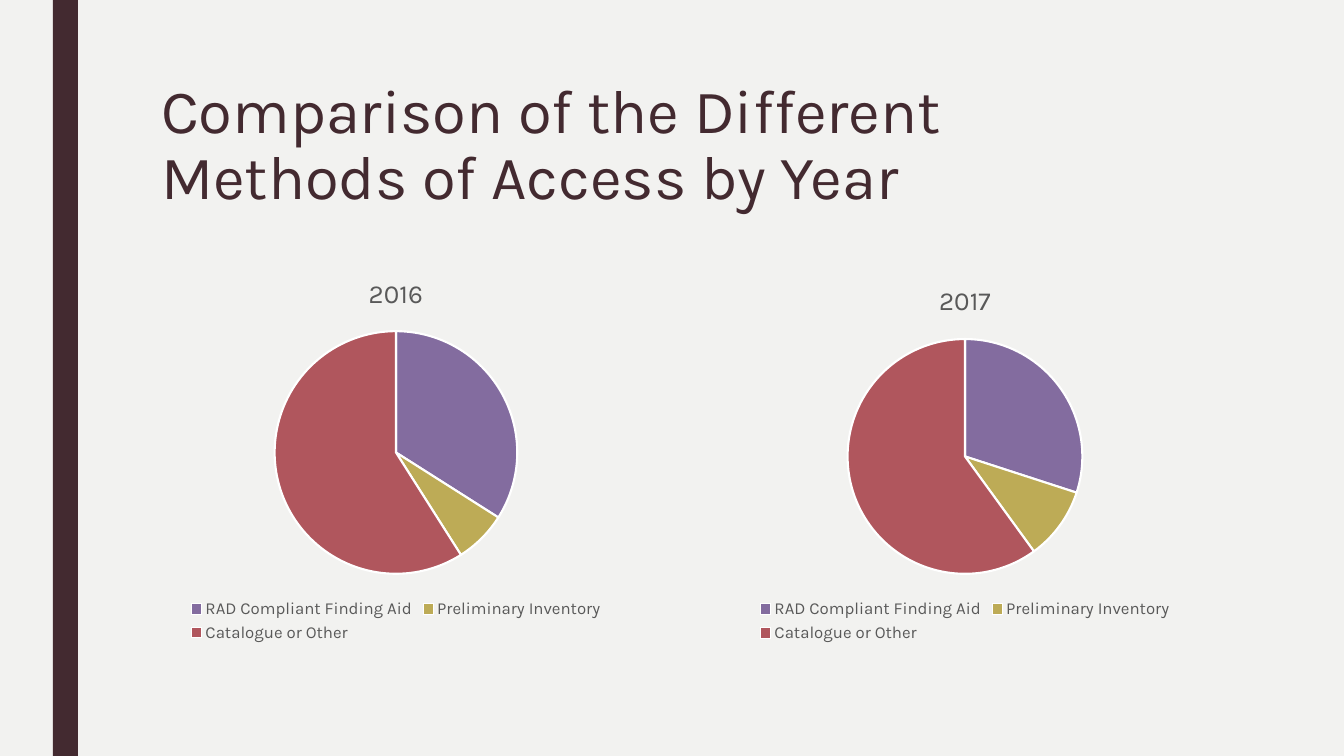
from pptx import Presentation
from pptx.chart.data import CategoryChartData
from pptx.dml.color import RGBColor
from pptx.enum.chart import XL_CHART_TYPE, XL_LEGEND_POSITION
from pptx.enum.shapes import MSO_SHAPE
from pptx.enum.text import MSO_ANCHOR, MSO_AUTO_SIZE, PP_ALIGN
from pptx.util import Emu, Pt

COLOURS = {
    "background": "F2F2F0",
    "plum": "432A30",
    "grey": "595959",
    "black": "000000",
    "white": "FFFFFF",
    "purple": "836C9F",
    "gold": "BDAB56",
    "red": "B0565D",
}
FONT = "Karla"
EMU_PER_PX = 914400 / 100.8
ACCESS_METHODS = {
    "RAD Compliant Finding Aid": "purple",
    "Preliminary Inventory": "gold",
    "Catalogue or Other": "red",
}


class SlideBuilder:
    def __init__(self, presentation):
        self.slide = presentation.slides.add_slide(presentation.slide_layouts[5])
        self.paint(self.slide.background.fill, "background")

    def box(self, *lengths):
        return [Emu(round(length * EMU_PER_PX)) for length in lengths]

    def paint(self, fill, colour):
        fill.solid()
        fill.fore_color.rgb = RGBColor.from_string(COLOURS[colour])

    def style_font(self, font, size, colour):
        font.name = FONT
        font.size = Pt(size)
        font.bold = False
        font.color.rgb = RGBColor.from_string(COLOURS[colour])

    def add_bar(self, left, top, width, height, colour):
        bar = self.slide.shapes.add_shape(
            MSO_SHAPE.RECTANGLE, *self.box(left, top, width, height)
        )
        bar.shadow.inherit = False
        self.paint(bar.fill, colour)
        bar.line.fill.background()

    def set_title(self, text, left, top, width, height):
        title = self.slide.shapes.title
        title.left, title.top, title.width, title.height = self.box(
            left, top, width, height
        )
        text_frame = title.text_frame
        text_frame.text = text
        text_frame.word_wrap = True
        text_frame.auto_size = MSO_AUTO_SIZE.NONE
        text_frame.vertical_anchor = MSO_ANCHOR.TOP
        paragraph = text_frame.paragraphs[0]
        paragraph.alignment = PP_ALIGN.LEFT
        paragraph.line_spacing = 0.89
        self.style_font(paragraph.runs[0].font, 44, "plum")

    def add_pie(self, year, values, left, top, width, height):
        chart_data = CategoryChartData()
        chart_data.categories = list(ACCESS_METHODS)
        chart_data.add_series(year, values)
        chart = self.slide.shapes.add_chart(
            XL_CHART_TYPE.PIE, *self.box(left, top, width, height), chart_data
        ).chart
        self.style_font(chart.font, 10, "black")

        chart.has_title = True
        title_frame = chart.chart_title.text_frame
        title_frame.text = year
        self.style_font(title_frame.paragraphs[0].runs[0].font, 18.6, "grey")
        chart.chart_title.include_in_layout = False

        chart.has_legend = True
        chart.legend.position = XL_LEGEND_POSITION.BOTTOM
        chart.legend.include_in_layout = False
        self.style_font(chart.legend.font, 12, "grey")

        plot = chart.plots[0]
        plot.vary_by_categories = True
        for index, colour in enumerate(ACCESS_METHODS.values()):
            slice_format = plot.series[0].points[index].format
            self.paint(slice_format.fill, colour)
            self.paint(slice_format.line.fill, "white")
            slice_format.line.width = Pt(1.5)


def main():
    presentation = Presentation()
    presentation.slide_width = Emu(12192000)
    presentation.slide_height = Emu(6858000)
    builder = SlideBuilder(presentation)
    builder.add_bar(53, 0, 25, 756, "plum")
    builder.set_title(
        "Comparison of the Different Methods of Access by Year", 151, 76, 1058, 163
    )
    builder.add_pie("2016", (34, 7, 59), 151, 258, 490, 389)
    builder.add_pie("2017", (30, 10, 60), 720, 266, 490, 381)
    presentation.save("out.pptx")


if __name__ == "__main__":
    main()
